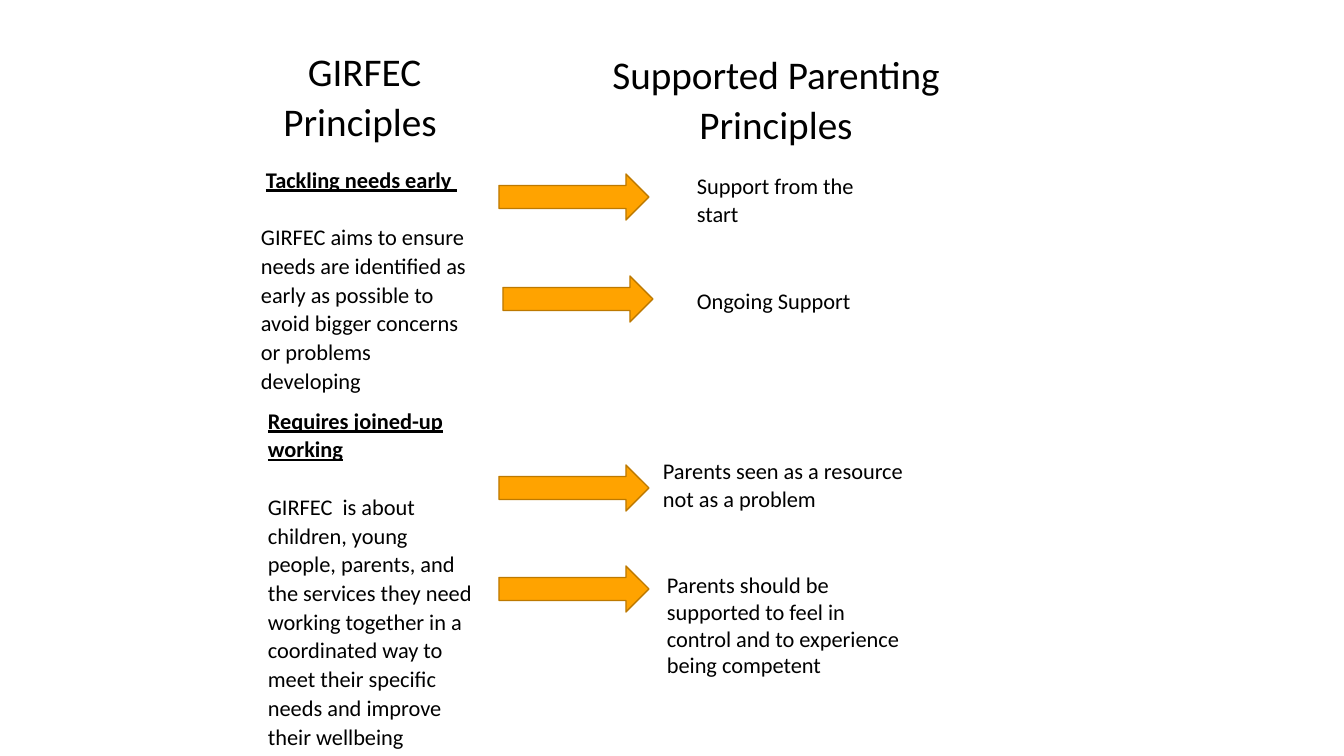
from pptx import Presentation
from pptx.dml.color import RGBColor
from pptx.enum.shapes import MSO_SHAPE as Shape
from pptx.enum.text import MSO_AUTO_SIZE as AutoSize, PP_ALIGN as Align
from pptx.util import Emu, Pt

COLOURS = {"text": "000000", "arrow": "FFA300", "outline": "BD7900"}
FONT = "Calibri"
HEADING_SIZE, BODY_SIZE = 28, 16
LINE_SPACING = 1.07
BLANK_LINE = 20.5


def px(value):
    return Emu(round(value * 914400 / 100.8))


class PrinciplesSlide:
    def __init__(self, deck):
        self.slide = deck.slides.add_slide(deck.slide_layouts[6])

    def text(self, box, lines, size=BODY_SIZE, align=Align.LEFT,
             spacing=LINE_SPACING, gap=BLANK_LINE):
        frame = self.slide.shapes.add_textbox(*map(px, box)).text_frame
        frame.word_wrap = True
        frame.auto_size = AutoSize.SHAPE_TO_FIT_TEXT
        for index, line in enumerate(lines):
            paragraph = frame.add_paragraph() if index else frame.paragraphs[0]
            paragraph.text = line
            paragraph.alignment = align
            paragraph.line_spacing = spacing
            if index:
                paragraph.space_before = Pt(gap)
            font = paragraph.font
            font.name, font.size = FONT, Pt(size)
            font.color.rgb = RGBColor.from_string(COLOURS["text"])
        return frame.paragraphs

    def heading(self, box, words):
        self.text(box, [words], HEADING_SIZE, Align.CENTER)

    def principle(self, box, name, meaning, indent=0):
        title = self.text(box, [name, meaning])[0]
        title.font.bold = title.font.underline = True
        if indent:
            title._p.get_or_add_pPr().set("indent", str(px(indent)))

    def arrow(self, left, top):
        arrow = self.slide.shapes.add_shape(
            Shape.RIGHT_ARROW, *map(px, (left, top, 150, 46)))
        arrow.shadow.inherit = False
        arrow.fill.solid()
        arrow.fill.fore_color.rgb = RGBColor.from_string(COLOURS["arrow"])
        arrow.line.color.rgb = RGBColor.from_string(COLOURS["outline"])
        arrow.line.width = Pt(1)


def main():
    deck = Presentation()
    deck.slide_width, deck.slide_height = px(1344), px(756)
    page = PrinciplesSlide(deck)

    page.heading((262, 39, 205, 110), "GIRFEC Principles ")
    page.principle(
        (251, 159, 226, 241), "Tackling needs early ",
        "GIRFEC aims to ensure needs are identified as early as possible "
        "to avoid bigger concerns or problems developing", indent=5)
    page.principle(
        (258, 400, 228, 359), "Requires joined-up working",
        "GIRFEC  is about children, young people, parents, and the services "
        "they need working together in a coordinated way to meet their "
        "specific needs and improve their wellbeing")

    page.heading((587, 42, 378, 112), "Supported Parenting Principles")
    page.text((687, 165, 177, 155),
              ["Support from the start", "Ongoing Support"],
              gap=2 * BLANK_LINE)
    page.text((653, 450, 266, 69),
              ["Parents seen as a resource not as a problem"])

    for left, top in ((499, 174), (503, 276), (499, 465), (499, 566)):
        page.arrow(left, top)

    page.text((657, 566, 262, 119),
              ["Parents should be supported to feel in control and to "
               "experience being competent"], spacing=1.0)

    deck.save("out.pptx")


if __name__ == "__main__":
    main()
